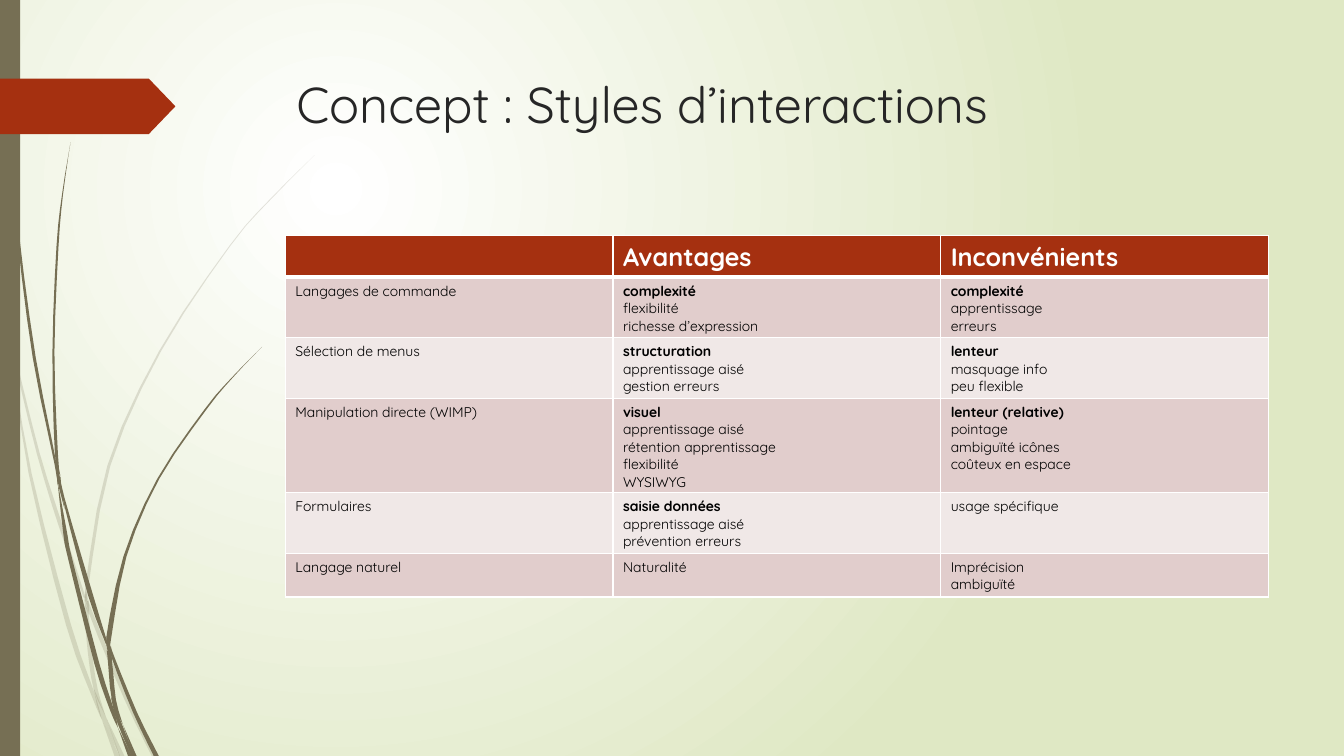
import lxml.etree
import pptx
import pptx.dml.color
import pptx.enum.shapes
import pptx.oxml
import pptx.oxml.ns
import pptx.util

TITLE = "Concept : Styles d’interactions"
HEADER = ["", "Avantages", "Inconvénients"]
STYLES = [
    ("Langages de commande",
     ["*complexité", "flexibilité", "richesse d’expression"],
     ["*complexité", "apprentissage", "erreurs"]),
    ("Sélection de menus",
     ["*structuration", "apprentissage aisé", "gestion erreurs"],
     ["*lenteur", "masquage info", "peu flexible"]),
    ("Manipulation directe (WIMP)",
     ["*visuel", "apprentissage aisé", "rétention apprentissage", "flexibilité", "WYSIWYG"],
     ["*lenteur (relative)", "pointage", "ambiguïté icônes", "coûteux en espace"]),
    ("Formulaires",
     ["*saisie données", "apprentissage aisé", "prévention erreurs"],
     ["usage spécifique"]),
    ("Langage naturel", ["Naturalité"], ["Imprécision", "ambiguïté"]),
]
PALE_BLADES = [
    [(0, 2.9, 0), (0.08, 3.24, 0.03), (0.11, 3.5, 0)],
    [(0.14, 3.45, 0), (0.17, 3.64, 0.02), (0.38, 4.5, 0.03), (0.6, 5.21, 0.04),
     (0.84, 5.93, 0.02)],
    [(0.88, 5.96, 0), (0.9, 6.08, 0.04), (1.25, 6.93, 0.04), (1.53, 7.5, 0.05)],
    [(1.05, 7.11, 0), (1.21, 7.5, 0.05)],
    [(0.11, 3.5, 0), (0.3, 4.7, 0.03), (0.68, 6.2, 0.05), (0.92, 6.88, 0.04),
     (1.01, 7.14, 0)],
    [(0.84, 5.99, 0), (0.86, 6.1, 0.04), (0.89, 6.46, 0.04), (0.95, 6.84, 0.04),
     (1.05, 7.11, 0)],
    [(3.12, 1.54, 0), (2.68, 1.98, 0.01), (2.28, 2.44, 0.01), (1.59, 3.48, 0.02),
     (1.08, 4.62, 0.03), (0.86, 5.84, 0.03), (0.88, 5.96, 0)],
    [(1.01, 7.14, 0), (1.16, 7.5, 0.05)],
    [(0.85, 5.86, 0), (0.86, 5.98, 0.04), (0.88, 6.1, 0)],
    [(0.93, 6.83, 0), (1.02, 7.1, 0.05), (1.19, 7.5, 0)],
]
DARK_BLADES = [
    [(0.04, 0, 0.01), (0.08, 1.1, 0.01), (0.18, 2.33, 0.02), (0.34, 3.55, 0.03),
     (0.55, 4.6, 0.02), (0.57, 4.81, 0)],
    [(0.6, 4.72, 0), (0.63, 4.94, 0.02), (0.9, 5.91, 0.05), (1.06, 6.39, 0.02)],
    [(1.1, 6.41, 0), (1.12, 6.52, 0.03), (1.34, 7.07, 0.04), (1.55, 7.5, 0.05)],
    [(1.22, 7.19, 0), (1.34, 7.5, 0.03)],
    [(0.57, 4.77, 0), (0.65, 5.31, 0.04), (0.7, 5.56, 0.04), (0.96, 6.58, 0.05),
     (1.11, 7.04, 0.04), (1.17, 7.22, 0)],
    [(0.7, 1.41, 0), (0.62, 1.93, 0.01), (0.57, 2.45, 0.02), (0.53, 3.49, 0.02),
     (0.56, 4.51, 0.03), (0.6, 4.72, 0)],
    [(1.17, 7.22, 0), (1.29, 7.5, 0.04)],
    [(0.55, 4.49, 0), (0.58, 4.74, 0.03), (0.64, 5.05, 0)],
    [(2.6, 3.44, 0), (2.31, 3.74, 0.01), (2.04, 4.06, 0.02), (1.57, 4.75, 0.02),
     (1.24, 5.52, 0.03), (1.08, 6.32, 0.05), (1.1, 6.41, 0)],
    [(1.06, 6.45, 0), (1.09, 6.55, 0.04), (1.13, 6.94, 0.04), (1.22, 7.19, 0)],
    [(1.06, 6.31, 0), (1.08, 6.43, 0.04), (1.11, 6.56, 0)],
    [(1.1, 6.91, 0), (1.18, 7.16, 0.04), (1.32, 7.5, 0.03)],
]
FONT = "Quicksand"
RUST, OLIVE, WHITE, BLACK = "A53010", "766F54", "FFFFFF", "000000"
BANDS = ["E1CDCC", "F0E8E7"]
WIDTH, HEIGHT = 13.33, 7.5
COLUMN, ROW, TABLE_HEIGHT = 3.25, 0.41, 4.13
STEPS = 3
UNITS = 1000


def inches(*lengths):
    return [pptx.util.Inches(length) for length in lengths]


def paint(fill, color, alpha=100):
    fill.solid()
    fill.fore_color.rgb = pptx.dml.color.RGBColor.from_string(color)
    if alpha < 100:
        tone = fill._xPr.find(".//" + pptx.oxml.ns.qn("a:srgbClr"))
        lxml.etree.SubElement(tone, pptx.oxml.ns.qn("a:alpha")).set("val", str(alpha * 1000))


def finish(shape, color, alpha=100):
    shape.shadow.inherit = False
    shape.line.fill.background()
    paint(shape.fill, color, alpha)


def write(para, text, size, color, bold=False):
    span = para.add_run()
    span.text = text
    span.font.name = FONT
    span.font.size = pptx.util.Pt(size)
    span.font.bold = bold
    paint(span.font.fill, color)


def smooth(knots):
    padded = [knots[0], *knots, knots[-1]]
    curve = []
    for before, start, end, after in zip(padded, padded[1:], padded[2:], padded[3:]):
        for step in range(STEPS):
            t = step / STEPS
            curve.append([
                b + ((c - a) * t + (2 * a - 5 * b + 4 * c - d) * t**2
                     + (3 * b - a - 3 * c + d) * t**3) / 2
                for a, b, c, d in zip(before, start, end, after)])
    return curve + [knots[-1]]


def add_blade(page, knots, alpha):
    curve = smooth(knots)
    left = [((x - w / 2) * UNITS, y * UNITS) for x, y, w in curve]
    right = [((x + w / 2) * UNITS, y * UNITS) for x, y, w in curve]
    outline = left + right[::-1]
    builder = page.shapes.build_freeform(*outline[0], scale=pptx.util.Inches(1) / UNITS)
    builder.add_line_segments(outline[1:], close=True)
    finish(builder.convert_to_shape(), OLIVE, alpha)


def add_borders(cell, bottom):
    properties = cell._tc.get_or_add_tcPr()
    for place, (side, points) in enumerate([("L", 1), ("R", 1), ("T", 1), ("B", bottom)]):
        properties.insert(place, pptx.oxml.parse_xml(
            f'<a:ln{side} {pptx.oxml.ns.nsdecls("a")} w="{points * 12700}">'
            f'<a:solidFill><a:srgbClr val="{WHITE}"/></a:solidFill></a:ln{side}>'))


def add_background(page):
    fill = page.background.fill
    fill.gradient()
    for stop, color in zip(fill.gradient_stops, [WHITE, "DFE8C4"]):
        stop.color.rgb = pptx.dml.color.RGBColor.from_string(color)
    direction = page._element.find(".//" + pptx.oxml.ns.qn("a:lin"))
    direction.getparent().replace(direction, pptx.oxml.parse_xml(
        f'<a:path {pptx.oxml.ns.nsdecls("a")} path="circle">'
        '<a:fillToRect l="50000" t="50000" r="100000" b="100000"/></a:path>'))


def add_decoration(page):
    for blades, alpha in [(PALE_BLADES, 20), (DARK_BLADES, 100)]:
        for knots in blades:
            add_blade(page, knots, alpha)
    kinds = pptx.enum.shapes.MSO_SHAPE
    finish(page.shapes.add_shape(kinds.RECTANGLE, *inches(0, 0, 0.2, HEIGHT)), OLIVE)
    arrow = page.shapes.add_shape(kinds.PENTAGON, *inches(0, 0.78, 1.74, 0.55))
    arrow.adjustments[0] = 0.48
    finish(arrow, RUST)


def add_title(page):
    box = page.shapes.add_textbox(*inches(2.84, 0.68, 3 * COLUMN, 1.4))
    box.text_frame.word_wrap = True
    write(box.text_frame.paragraphs[0], TITLE, 36, "262626")


def add_styles_table(page):
    rows = len(STYLES) + 1
    frame = page.shapes.add_table(
        rows, len(HEADER), *inches(2.83, 2.34, COLUMN * len(HEADER), ROW * rows))
    frame.height = pptx.util.Inches(TABLE_HEIGHT)
    table = frame.table
    for column, heading in enumerate(HEADER):
        cell = table.cell(0, column)
        paint(cell.fill, RUST)
        add_borders(cell, 3)
        if heading:
            write(cell.text_frame.paragraphs[0], heading, 18, WHITE, True)
    for row, (style, pros, cons) in enumerate(STYLES, 1):
        for column, lines in enumerate([[style], pros, cons]):
            cell = table.cell(row, column)
            paint(cell.fill, BANDS[(row - 1) % 2])
            add_borders(cell, 1)
            for index, line in enumerate(lines):
                body = cell.text_frame
                para = body.add_paragraph() if index else body.paragraphs[0]
                write(para, line.lstrip("*"), 10, BLACK, line.startswith("*"))


def main():
    deck = pptx.Presentation()
    deck.slide_width, deck.slide_height = inches(WIDTH, HEIGHT)
    page = deck.slides.add_slide(deck.slide_layouts[6])
    add_background(page)
    add_decoration(page)
    add_title(page)
    add_styles_table(page)
    deck.save("out.pptx")


if __name__ == "__main__":
    main()
